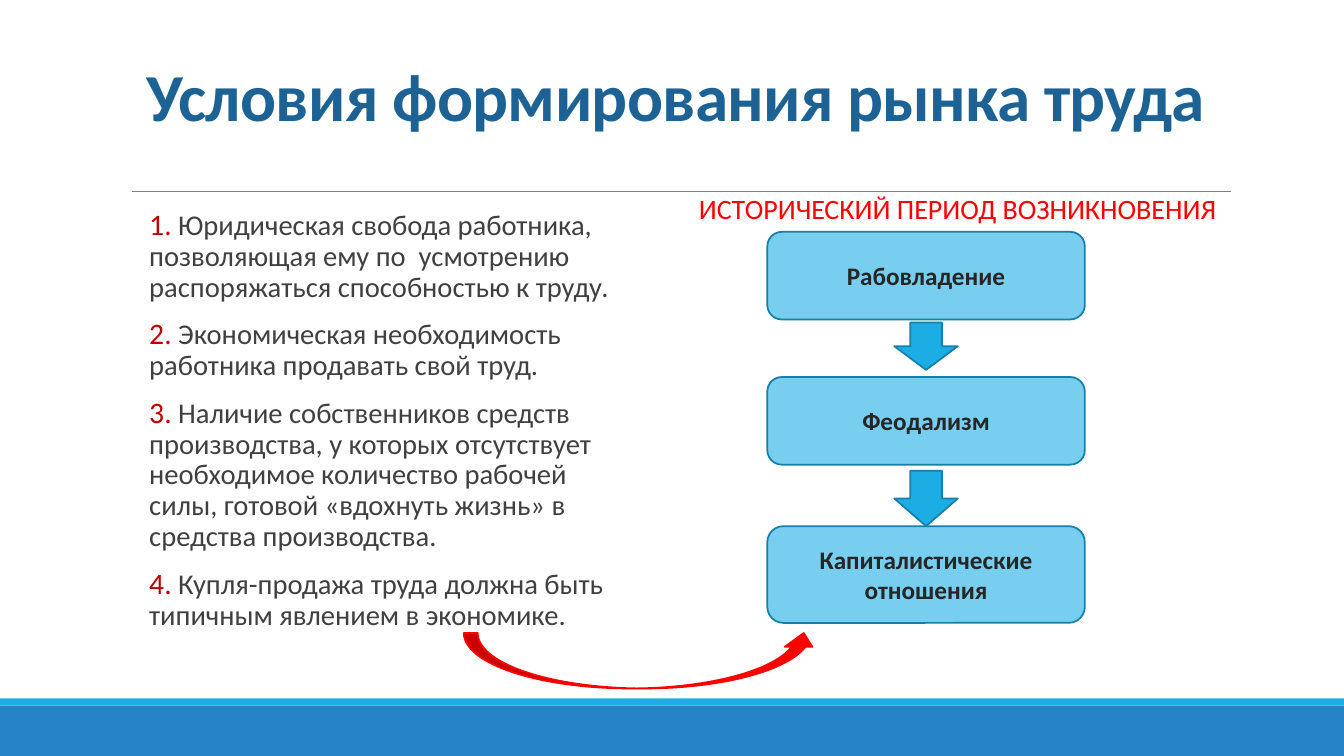
from lxml import etree
from pptx import Presentation
from pptx.dml.color import RGBColor
from pptx.enum import shapes, text
from pptx.oxml import ns
from pptx.util import Inches, Pt

WHITE = RGBColor(0xFF, 0xFF, 0xFF)
BAND_BLUE = RGBColor(0x26, 0x83, 0xC6)
ACCENT = RGBColor(0x1C, 0xAD, 0xE4)
BOX_FILL = RGBColor(0x77, 0xCE, 0xEF)
BOX_LINE = RGBColor(0x15, 0x80, 0xA9)
TITLE_BLUE = RGBColor(0x1D, 0x62, 0x94)
RED = RGBColor(0xFF, 0, 0)
GREY = RGBColor(0x80, 0x80, 0x80)
BODY_GREY = RGBColor(0x40, 0x40, 0x40)
BOX_TEXT = RGBColor(0x26, 0x26, 0x26)
Kind = shapes.MSO_SHAPE
Anchor = text.MSO_ANCHOR
CENTER = text.PP_ALIGN.CENTER

CONDITIONS = [
    " Юридическая свобода работника, позволяющая ему по  усмотрению распоряжаться способностью к труду.",
    " Экономическая необходимость работника продавать свой труд.",
    " Наличие собственников средств производства, у которых отсутствует необходимое количество "
    "рабочей силы, готовой «вдохнуть жизнь» в средства производства.",
    " Купля-продажа труда должна быть типичным явлением в экономике.",
]
PERIODS = [
    ("Рабовладение", 2.3, 0.87),
    ("Феодализм", 3.74, 0.87),
    ("Капиталистические отношения", 5.22, 0.96),
]

deck = Presentation()
deck.slide_width, deck.slide_height = Inches(13.33), Inches(7.5)
page = deck.slides.add_slide(deck.slide_layouts[5])


def add_figure(kind, left, top, width, height, fill, outline=None):
    figure = page.shapes.add_shape(kind, *map(Inches, (left, top, width, height)))
    figure.shadow.inherit = False
    figure.fill.solid()
    figure.fill.fore_color.rgb = fill
    if outline is None:
        figure.line.fill.background()
    else:
        figure.line.color.rgb = outline
        figure.line.width = Pt(1.25)
    return figure


def write(box, lines, anchor, font, layout):
    """Fill a shape with one formatted paragraph per line and return the paragraphs."""
    frame = box.text_frame
    frame.word_wrap = True
    frame.auto_size = text.MSO_AUTO_SIZE.NONE
    frame.vertical_anchor = anchor
    for index, line in enumerate(lines):
        para = frame.paragraphs[0] if index == 0 else frame.add_paragraph()
        for name, value in layout.items():
            setattr(para, name, value)
        span = para.add_run()
        span.text = line
        span.font.name = "Calibri"
        span.font.color.rgb = font["color"]
        span.font.size = Pt(font["size"])
        span.font.bold = font.get("bold", False)
    return frame.paragraphs


# Bands and rule
add_figure(Kind.RECTANGLE, 0, 7, 13.33, 0.5, BAND_BLUE)
add_figure(Kind.RECTANGLE, 0, 6.93, 13.33, 0.07, ACCENT)
rule = page.shapes.add_connector(shapes.MSO_CONNECTOR.STRAIGHT,
                                 Inches(1.31), Inches(1.9), Inches(12.21), Inches(1.9))
rule.line.color.rgb = GREY
rule.line.width = Pt(0.5)
etree.SubElement(rule._element.spPr, ns.qn("a:effectLst"))

# Title and heading
title = page.shapes.title
title.left, title.top, title.width, title.height = map(Inches, (1.2, 0.31, 11, 1.08))
title_paras = write(title, ["Условия формирования рынка труда"], Anchor.BOTTOM,
                    {"color": TITLE_BLUE, "size": 48, "bold": True},
                    {"alignment": CENTER, "line_spacing": 0.85})
title_paras[0].runs[0].font._element.set("spc", "-50")

heading = page.shapes.add_textbox(*map(Inches, (6.8, 1.68, 5.4, 0.81)))
write(heading, ["ИСТОРИЧЕСКИЙ ПЕРИОД ВОЗНИКНОВЕНИЯ"], Anchor.MIDDLE,
      {"color": RED, "size": 20},
      {"alignment": CENTER, "line_spacing": 0.9, "space_before": Pt(12)})

# Numbered conditions
conditions = page.shapes.add_textbox(*map(Inches, (1.48, 2.04, 4.58, 4.57)))
conditions.text_frame.margin_left = conditions.text_frame.margin_right = 0
for para in write(conditions, CONDITIONS, Anchor.TOP, {"color": BODY_GREY, "size": 20.4},
                  {"line_spacing": 0.9, "space_after": Pt(12)}):
    props = para._p.get_or_add_pPr()
    bullet_color = etree.SubElement(props, ns.qn("a:buClr"))
    etree.SubElement(bullet_color, ns.qn("a:srgbClr"), val="C00000")
    etree.SubElement(props, ns.qn("a:buSzPct"), val="104000")
    etree.SubElement(props, ns.qn("a:buFont"), typeface="Calibri")
    etree.SubElement(props, ns.qn("a:buAutoNum"), type="arabicPeriod")

# Historical periods
for name, top, height in PERIODS:
    period = add_figure(Kind.ROUNDED_RECTANGLE, 7.61, top, 3.15, height, BOX_FILL, BOX_LINE)
    write(period, [name], Anchor.MIDDLE, {"color": BOX_TEXT, "size": 18, "bold": True},
          {"alignment": CENTER})
for top, height in [(3.2, 0.47), (4.67, 0.55)]:
    add_figure(Kind.DOWN_ARROW, 8.87, top, 0.63, height, ACCENT, BOX_LINE)
add_figure(Kind.CURVED_UP_ARROW, 4.6, 6.28, 3.51, 0.55, RED, RED)

deck.save("out.pptx")
